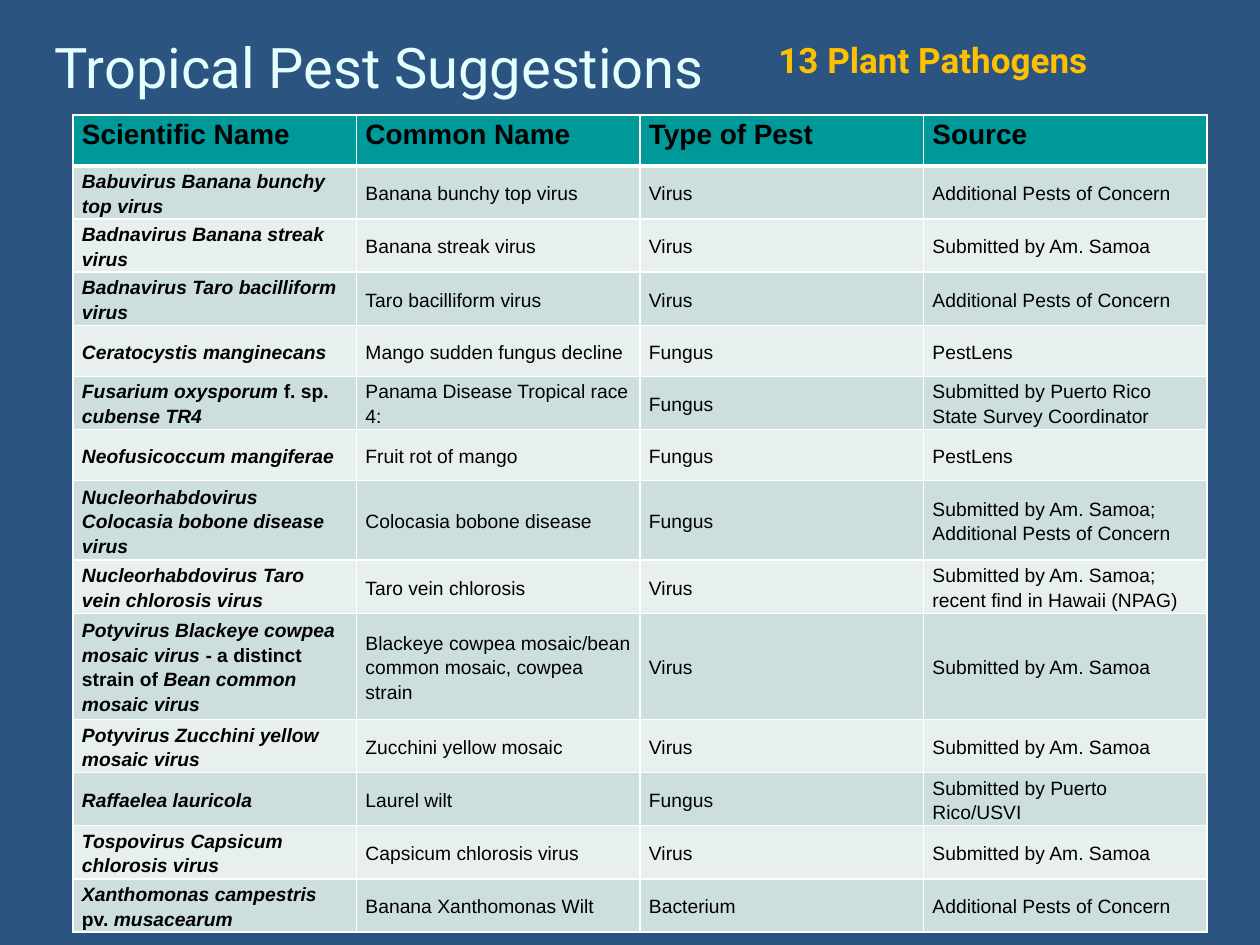
import pptx
import pptx.dml.color
import pptx.enum.text
import pptx.oxml
import pptx.oxml.ns
import pptx.util
from dataclasses import dataclass


@dataclass(frozen=True)
class Theme:
    background: str = "2B5481"
    title: str = "E5FFFF"
    accent: str = "FFC000"
    header: str = "009999"
    bands: tuple = ("CCDEDE", "E7EFEF")
    ink: str = "000000"
    rule: str = "FFFFFF"
    display_font: str = "Roboto"
    table_font: str = "Arial"
    title_size: int = 32
    subtitle_size: int = 20
    header_size: int = 16
    body_size: int = 11
    line_spacing: float = 1.15


EMU_PER_PX = 914400 / 126
MIDDLE = pptx.enum.text.MSO_ANCHOR.MIDDLE
TOP = pptx.enum.text.MSO_ANCHOR.TOP

HEADINGS = ["Scientific Name", "Common Name", "Type of Pest", "Source"]
CONCERN = "Additional Pests of Concern"
SAMOA = "Submitted by Am. Samoa"

# Scientific names alternate italic and upright parts, italic first.
PATHOGENS = [
    (["Babuvirus Banana bunchy top virus"], "Banana bunchy top virus", "Virus", CONCERN),
    (["Badnavirus Banana streak virus"], "Banana streak virus", "Virus", SAMOA),
    (["Badnavirus Taro bacilliform virus"], "Taro bacilliform virus", "Virus", CONCERN),
    (["Ceratocystis manginecans"], "Mango sudden fungus decline", "Fungus", "PestLens"),
    (["Fusarium oxysporum ", "f. sp. ", "cubense TR4"],
     "Panama Disease Tropical race 4:", "Fungus",
     "Submitted by Puerto Rico State Survey Coordinator"),
    (["Neofusicoccum mangiferae"], "Fruit rot of mango", "Fungus", "PestLens"),
    (["Nucleorhabdovirus Colocasia bobone disease virus"],
     "Colocasia bobone disease", "Fungus", f"{SAMOA}; {CONCERN}"),
    (["Nucleorhabdovirus Taro vein chlorosis virus"],
     "Taro vein chlorosis", "Virus", f"{SAMOA}; recent find in Hawaii (NPAG)"),
    (["Potyvirus Blackeye cowpea mosaic virus ", "- a distinct strain of",
      " Bean common mosaic virus"],
     "Blackeye cowpea mosaic/bean common mosaic, cowpea strain", "Virus", SAMOA),
    (["Potyvirus Zucchini yellow mosaic virus"], "Zucchini yellow mosaic", "Virus", SAMOA),
    (["Raffaelea lauricola"], "Laurel wilt", "Fungus", "Submitted by Puerto Rico/USVI"),
    (["Tospovirus Capsicum chlorosis virus"], "Capsicum chlorosis virus", "Virus", SAMOA),
    (["Xanthomonas campestris ", "pv. ", "musacearum"],
     "Banana Xanthomonas Wilt", "Bacterium", CONCERN),
]


def px(length):
    return pptx.util.Emu(round(length * EMU_PER_PX))


def rgb(color):
    return pptx.dml.color.RGBColor.from_string(color)


class SlideWriter:
    def __init__(self, slide, theme):
        self.slide = slide
        self.theme = theme
        slide.background.fill.solid()
        slide.background.fill.fore_color.rgb = rgb(theme.background)

    def style(self, paragraph, family, size, color, bold=False):
        font = paragraph.font
        font.name = family
        font.size = pptx.util.Pt(size)
        font.color.rgb = rgb(color)
        font.bold = bold

    def text(self, left, top, width, height, words, size, color, bold=False, anchor=TOP):
        frame = self.slide.shapes.add_textbox(
            px(left), px(top), px(width), px(height)).text_frame
        frame.word_wrap = True
        frame.vertical_anchor = anchor
        paragraph = frame.paragraphs[0]
        paragraph.text = words
        self.style(paragraph, self.theme.display_font, size, color, bold)

    def borders(self, cell, bottom):
        properties = cell._tc.get_or_add_tcPr()
        for side, points in (("L", 1), ("R", 1), ("T", 1), ("B", bottom)):
            properties.append(pptx.oxml.parse_xml(
                f'<a:ln{side} {pptx.oxml.ns.nsdecls("a")} w="{pptx.util.Pt(points)}">'
                f'<a:solidFill><a:srgbClr val="{self.theme.rule}"/></a:solidFill>'
                f'</a:ln{side}>'))

    def cell(self, cell, words, fill, size, bold, anchor=MIDDLE, bottom=1):
        self.borders(cell, bottom)
        cell.fill.solid()
        cell.fill.fore_color.rgb = rgb(fill)
        cell.vertical_anchor = anchor
        cell.margin_left = cell.margin_right = px(9)
        cell.margin_top = cell.margin_bottom = 0
        paragraph = cell.text_frame.paragraphs[0]
        paragraph.line_spacing = self.theme.line_spacing
        if isinstance(words, str):
            paragraph.text = words
        else:
            for position, part in enumerate(words):
                run = paragraph.add_run()
                run.text = part
                run.font.italic = position % 2 == 0
        self.style(paragraph, self.theme.table_font, size, self.theme.ink, bold)

    def table(self, left, top, width, row_height, headings, records):
        theme = self.theme
        row_count = len(records) + 1
        grid = self.slide.shapes.add_table(
            row_count, len(headings), px(left), px(top), px(width),
            px(row_height * row_count)).table
        for column, heading in enumerate(headings):
            self.cell(grid.cell(0, column), heading, theme.header,
                      theme.header_size, True, TOP, 3)
        for row, record in enumerate(records, 1):
            band = theme.bands[(row - 1) % 2]
            for column, words in enumerate(record):
                self.cell(grid.cell(row, column), words, band,
                          theme.body_size, column == 0)


def main():
    deck = pptx.Presentation()
    deck.slide_width, deck.slide_height = px(1260), px(945)
    theme = Theme()
    writer = SlideWriter(deck.slides.add_slide(deck.slide_layouts[6]), theme)
    writer.text(42, 19, 1134, 94, "Tropical Pest Suggestions",
                theme.title_size, theme.title, anchor=MIDDLE)
    writer.table(73, 115, 1134, 51, HEADINGS, PATHOGENS)
    writer.text(766, 32, 472, 55, "13 Plant Pathogens",
                theme.subtitle_size, theme.accent, bold=True)
    deck.save("out.pptx")


if __name__ == "__main__":
    main()
